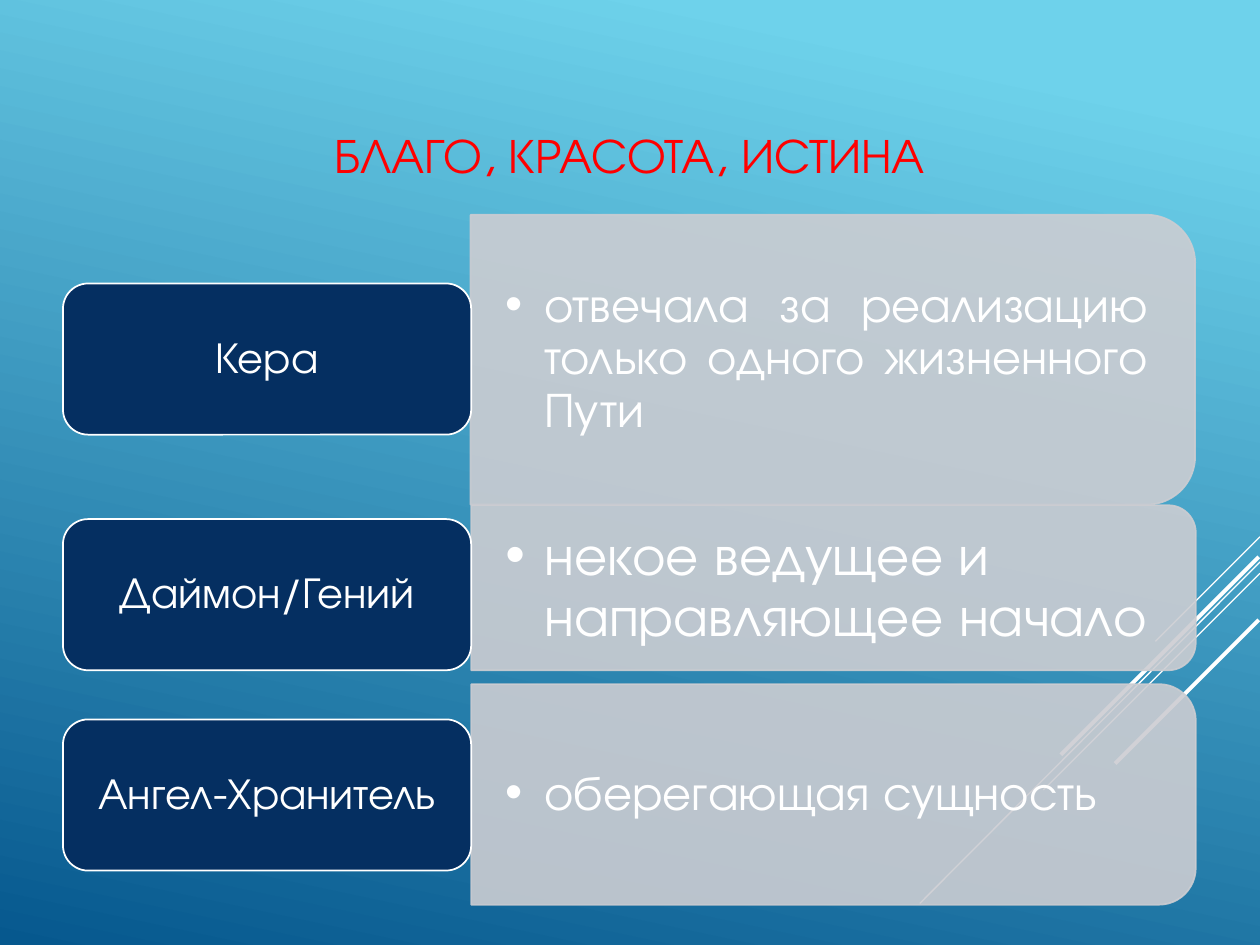
from typing import NamedTuple

from lxml.etree import SubElement
from pptx import Presentation
from pptx.dml.color import RGBColor
from pptx.enum.shapes import MSO_CONNECTOR as Connector
from pptx.enum.shapes import MSO_SHAPE as Shape
from pptx.enum.text import MSO_ANCHOR as Anchor
from pptx.enum.text import PP_ALIGN as Align
from pptx.oxml.ns import qn
from pptx.util import Pt

PX = 9144  # 100 px to the inch
FONT = "TeX Gyre Adventor"
COLORS = {
    "sky": "6ED2EB",
    "sea": "06588E",
    "title": "FF0000",
    "white": "FFFFFF",
    "panel": "CCCDD2",
    "label": "052F61",
}
PANEL_LEFT, PANEL_WIDTH = 374, 575
LABEL_LEFT, LABEL_WIDTH, LABEL_HEIGHT = 50, 324, 120
CORNER_INSET = 0.0488  # share of a panel's height that its round corners take
PANEL_OPACITY = 90


class Box(NamedTuple):
    left: int
    top: int
    width: int
    height: int

    def emu(self) -> list[int]:
        return [value * PX for value in self]


class Ray(NamedTuple):
    x1: int
    y1: int
    x2: int
    y2: int
    weight: float


class Row(NamedTuple):
    label: str
    label_top: int
    text: str
    size: int
    align: Align
    panel_top: int
    panel_height: int


RAYS = [
    Ray(1000, 426, 917, 509, 0.75),
    Ray(1000, 446, 730, 717, 0.75),
    Ray(1000, 455, 828, 627, 0.75),
    Ray(999, 442, 842, 599, 2.25),
    Ray(999, 492, 885, 606, 2.25),
]
ROWS = [
    Row("Кера", 225, "отвечала за реализацию только одного жизненного Пути",
        28, Align.JUSTIFY, 170, 230),
    Row("Даймон/Гений", 412, "некое ведущее и направляющее начало",
        32, Align.LEFT, 401, 131),
    Row("Ангел-Хранитель", 571, "оберегающая сущность",
        28, Align.LEFT, 543, 175),
]


def rgb(name: str) -> RGBColor:
    return RGBColor.from_string(COLORS[name])


def apply(target, values: dict) -> None:
    for name, value in values.items():
        setattr(target, name, value)


def paint_background(slide) -> None:
    fill = slide.background.fill
    fill.gradient()
    fill.gradient_angle = 258
    for stop, name, position in zip(fill.gradient_stops, ("sky", "sea"), (0.1, 1)):
        stop.color.rgb = rgb(name)
        stop.position = position


def add_ray(slide, ray: Ray) -> None:
    ends = [value * PX for value in ray[:4]]
    line = slide.shapes.add_connector(Connector.STRAIGHT, *ends)
    line.line.color.rgb = rgb("white")
    line.line.width = Pt(ray.weight)
    SubElement(line._element.spPr, qn("a:effectLst"))


def add_block(slide, kind: Shape, box: Box, fill: str, line: str):
    shape = slide.shapes.add_shape(kind, *box.emu())
    shape.shadow.inherit = False
    shape.fill.solid()
    shape.fill.fore_color.rgb = rgb(fill)
    shape.line.color.rgb = rgb(line)
    shape.line.width = Pt(1)
    return shape


def write(shape, text: str, size: float, color: str, align: Align,
          margins: tuple[int, int, int, int], spacing: float = 0.9):
    """Fill the shape with one paragraph; margins are left, top, right, bottom."""
    left, top, right, bottom = (margin * PX for margin in margins)
    apply(shape.text_frame, {
        "word_wrap": True,
        "vertical_anchor": Anchor.MIDDLE,
        "margin_left": left,
        "margin_top": top,
        "margin_right": right,
        "margin_bottom": bottom,
    })
    paragraph = shape.text_frame.paragraphs[0]
    apply(paragraph, {"alignment": align, "line_spacing": spacing})
    run = paragraph.add_run()
    run.text = text
    apply(run.font, {"name": FONT, "size": Pt(size), "bold": False})
    run.font.color.rgb = rgb(color)
    return paragraph


def add_bullet(paragraph, indent: int) -> None:
    properties = paragraph._p.get_or_add_pPr()
    properties.set("marL", str(indent * PX))
    properties.set("indent", str(-indent * PX))
    SubElement(properties, qn("a:buFont")).set("typeface", "Arial")
    SubElement(properties, qn("a:buChar")).set("char", "•")


def add_panel(slide, row: Row) -> None:
    """Draw a panel turned a quarter, so that its round corners face right."""
    height = row.panel_height
    shift = (PANEL_WIDTH - height) // 2
    box = Box(PANEL_LEFT + shift, row.panel_top - shift, height, PANEL_WIDTH)
    panel = add_block(slide, Shape.ROUND_2_SAME_RECTANGLE, box, "panel", "panel")
    panel.rotation = 90
    for color in panel._element.spPr.iter(qn("a:srgbClr")):
        SubElement(color, qn("a:alpha")).set("val", str(PANEL_OPACITY * 1000))

    inset = round(height * CORNER_INSET)
    text_box = Box(PANEL_LEFT, row.panel_top + inset,
                   PANEL_WIDTH - inset, height - 2 * inset)
    text = slide.shapes.add_textbox(*text_box.emu())
    paragraph = write(text, row.text, row.size, "white", row.align, (27, 14, 27, 14))
    add_bullet(paragraph, 31)


def add_label(slide, row: Row) -> None:
    box = Box(LABEL_LEFT, row.label_top, LABEL_WIDTH, LABEL_HEIGHT)
    label = add_block(slide, Shape.ROUNDED_RECTANGLE, box, "label", "white")
    write(label, row.label, 25, "white", Align.CENTER, (10, 5, 10, 5))


def main() -> None:
    presentation = Presentation()
    apply(presentation, {"slide_width": 1000 * PX, "slide_height": 750 * PX})
    slide = presentation.slides.add_slide(presentation.slide_layouts[6])
    paint_background(slide)
    for ray in RAYS:
        add_ray(slide, ray)
    title = slide.shapes.add_textbox(*Box(50, 60, 900, 102).emu())
    write(title, "БЛАГО, КРАСОТА, ИСТИНА", 27.9, "title", Align.CENTER,
          (10, 33, 10, 5))
    for row in ROWS:
        add_panel(slide, row)
        add_label(slide, row)
    presentation.save("out.pptx")


if __name__ == "__main__":
    main()
